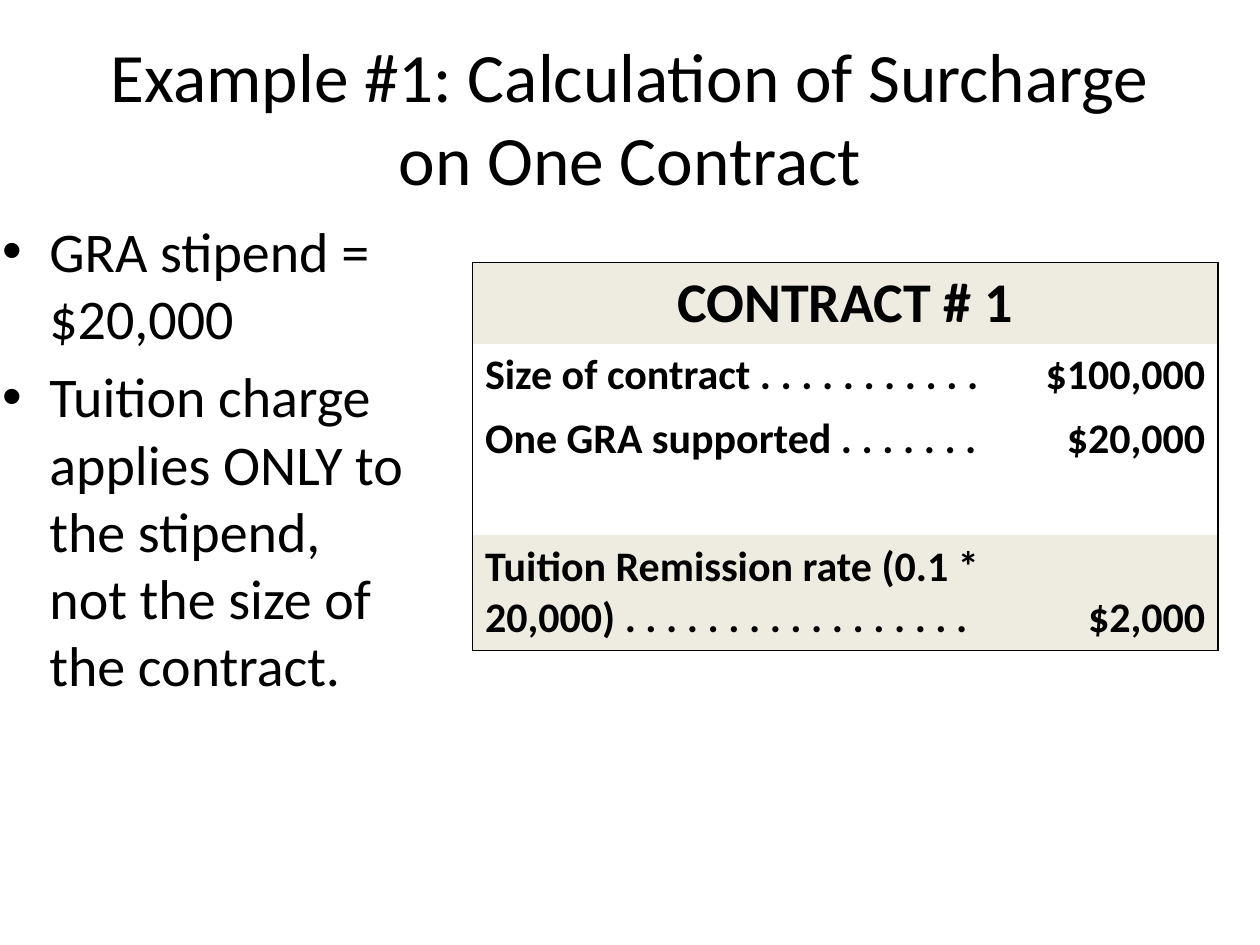
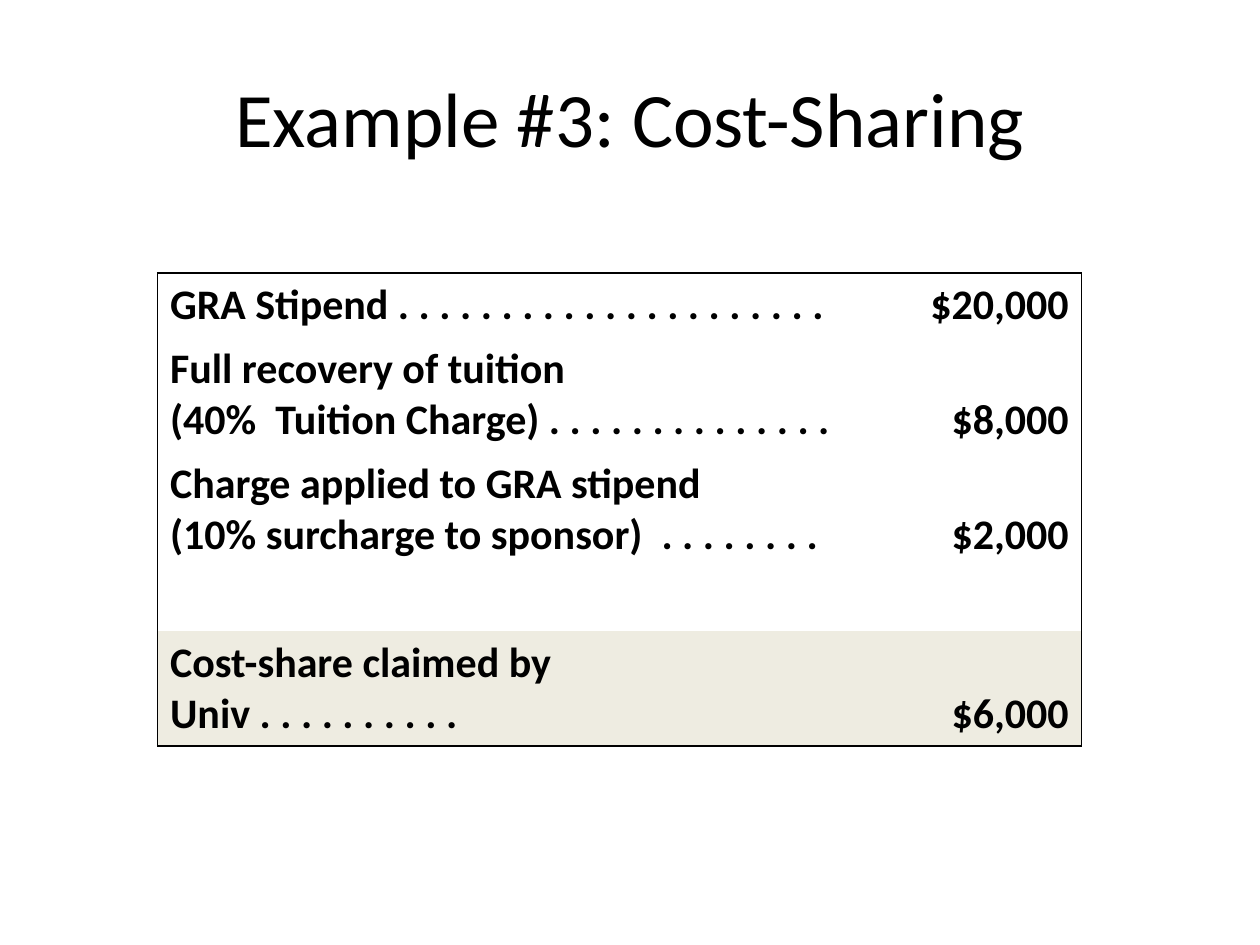
from dataclasses import dataclass

from lxml.etree import SubElement
from pptx import Presentation
from pptx.dml.color import RGBColor
from pptx.enum.text import MSO_ANCHOR as Anchor, MSO_AUTO_SIZE as AutoSize, PP_ALIGN as Align
from pptx.oxml.ns import qn
from pptx.util import Pt


@dataclass(frozen=True)
class Theme:
    font: str = "Calibri"
    ink: str = "000000"
    band: str = "EEECE1"
    heading: float = 32
    bullet: float = 32
    row: float = 24
    border: float = 1
    line_spacing: float = 1.22
    cell_padding: float = 7.2


THEME = Theme()
SLIDE_SIZE = (720, 540)
TITLE_BOX = (36, 21.6, 648, 90)
BULLETS_BOX = (-6, 120, 246, 342)
TITLE_AND_BODY, TITLE_ONLY = 1, 5

# Content: a row is (label, amount, shaded, lines of text)
SLIDES = [
    dict(
        title="Example #1: Calculation of Surcharge on One Contract",
        title_size=39.6,
        bullets=[
            "GRA stipend = $20,000",
            "Tuition charge applies ONLY to the stipend, not the size of the contract.",
        ],
        heading="CONTRACT # 1",
        rows=[
            ("Size of contract . . . . . . . . . . .", "$100,000", False, 1),
            ("One GRA supported . . . . . . .", "$20,000", False, 1),
            ("", "", False, 1),
            ("Tuition Remission rate (0.1 * 20,000) . . . . . . . . . . . . . . . . .",
             "$2,000", True, 2),
        ],
        table_at=(270, 150),
        columns=(299.5, 126.5),
    ),
    dict(
        title="Example #3: Cost-Sharing",
        title_size=44,
        bullets=[],
        heading=None,
        rows=[
            ("GRA Stipend . . . . . . . . . . . . . . . . . . . . .", "$20,000", False, 1),
            ("Full recovery of tuition\n(40%  Tuition Charge) . . . . . . . . . . . . . .",
             "$8,000", False, 2),
            ("Charge applied to GRA stipend\n(10% surcharge to sponsor)  . . . . . . . .",
             "$2,000", False, 2),
            ("", "", False, 1),
            ("Cost-share claimed by Univ . . . . . . . . . .", "$6,000", True, 1),
        ],
        table_at=(90, 156),
        columns=(396, 132),
    ),
]


def place(shape, box):
    shape.left, shape.top, shape.width, shape.height = map(Pt, box)


def style(paragraph, size, bold=False):
    paragraph.font.name = THEME.font
    paragraph.font.size = Pt(size)
    paragraph.font.bold = bold
    paragraph.font.color.rgb = RGBColor.from_string(THEME.ink)


def fill_placeholder(placeholder, box, paragraphs, size):
    place(placeholder, box)
    frame = placeholder.text_frame
    frame.text = "\n".join(paragraphs)
    frame.auto_size = AutoSize.NONE
    for paragraph in frame.paragraphs:
        style(paragraph, size)


def set_borders(cell, drawn):
    """Draw the sides flagged in drawn (left, right, top, bottom), clear the rest."""
    properties = cell._tc.get_or_add_tcPr()
    for position, (side, visible) in enumerate(zip("LRTB", drawn)):
        line = properties.makeelement(qn(f"a:ln{side}"), {"w": str(Pt(THEME.border))})
        if visible:
            solid = SubElement(line, qn("a:solidFill"))
            SubElement(solid, qn("a:srgbClr"), val=THEME.ink)
        else:
            SubElement(line, qn("a:noFill"))
        properties.insert(position, line)


def write_cell(cell, text, size, align, shaded):
    cell.text = text
    for paragraph in cell.text_frame.paragraphs:
        style(paragraph, size, bold=True)
        paragraph.alignment = align
    if shaded:
        cell.fill.solid()
        cell.fill.fore_color.rgb = RGBColor.from_string(THEME.band)
    else:
        cell.fill.background()


def add_cost_table(slide, heading, rows, table_at, columns):
    # Row heights follow from the type size and the number of lines
    sizes = [THEME.row] * len(rows)
    if heading:
        rows = [(heading, "", True, 1)] + rows
        sizes = [THEME.heading] + sizes
    heights = [size * THEME.line_spacing * row[3] + THEME.cell_padding
               for size, row in zip(sizes, rows)]
    box = (*table_at, sum(columns), sum(heights))
    costs = slide.shapes.add_table(len(rows), len(columns), *map(Pt, box)).table
    costs.first_row = costs.horz_banding = False
    for column, width in zip(costs.columns, columns):
        column.width = Pt(width)

    for index, (label, amount, shaded, _) in enumerate(rows):
        costs.rows[index].height = Pt(heights[index])
        is_heading = bool(heading) and index == 0
        label_cell, amount_cell = costs.cell(index, 0), costs.cell(index, 1)
        label_align = Align.CENTER if is_heading else Align.LEFT
        write_cell(label_cell, label, sizes[index], label_align, shaded)
        write_cell(amount_cell, amount, sizes[index], Align.RIGHT, shaded)
        amount_cell.vertical_anchor = Anchor.BOTTOM
        # Only the outer frame is drawn
        top, bottom = index == 0, index == len(rows) - 1
        set_borders(label_cell, (True, is_heading, top, bottom))
        set_borders(amount_cell, (False, True, top, bottom))
        if is_heading:
            label_cell.merge(amount_cell)


def add_example(deck, example):
    layout = TITLE_AND_BODY if example["bullets"] else TITLE_ONLY
    slide = deck.slides.add_slide(deck.slide_layouts[layout])
    fill_placeholder(slide.shapes.title, TITLE_BOX, [example["title"]], example["title_size"])
    if example["bullets"]:
        fill_placeholder(slide.placeholders[1], BULLETS_BOX, example["bullets"], THEME.bullet)
    add_cost_table(slide, example["heading"], example["rows"],
                   example["table_at"], example["columns"])


def main():
    deck = Presentation()
    deck.slide_width, deck.slide_height = map(Pt, SLIDE_SIZE)
    for example in SLIDES:
        add_example(deck, example)
    deck.save("out.pptx")


if __name__ == "__main__":
    main()
